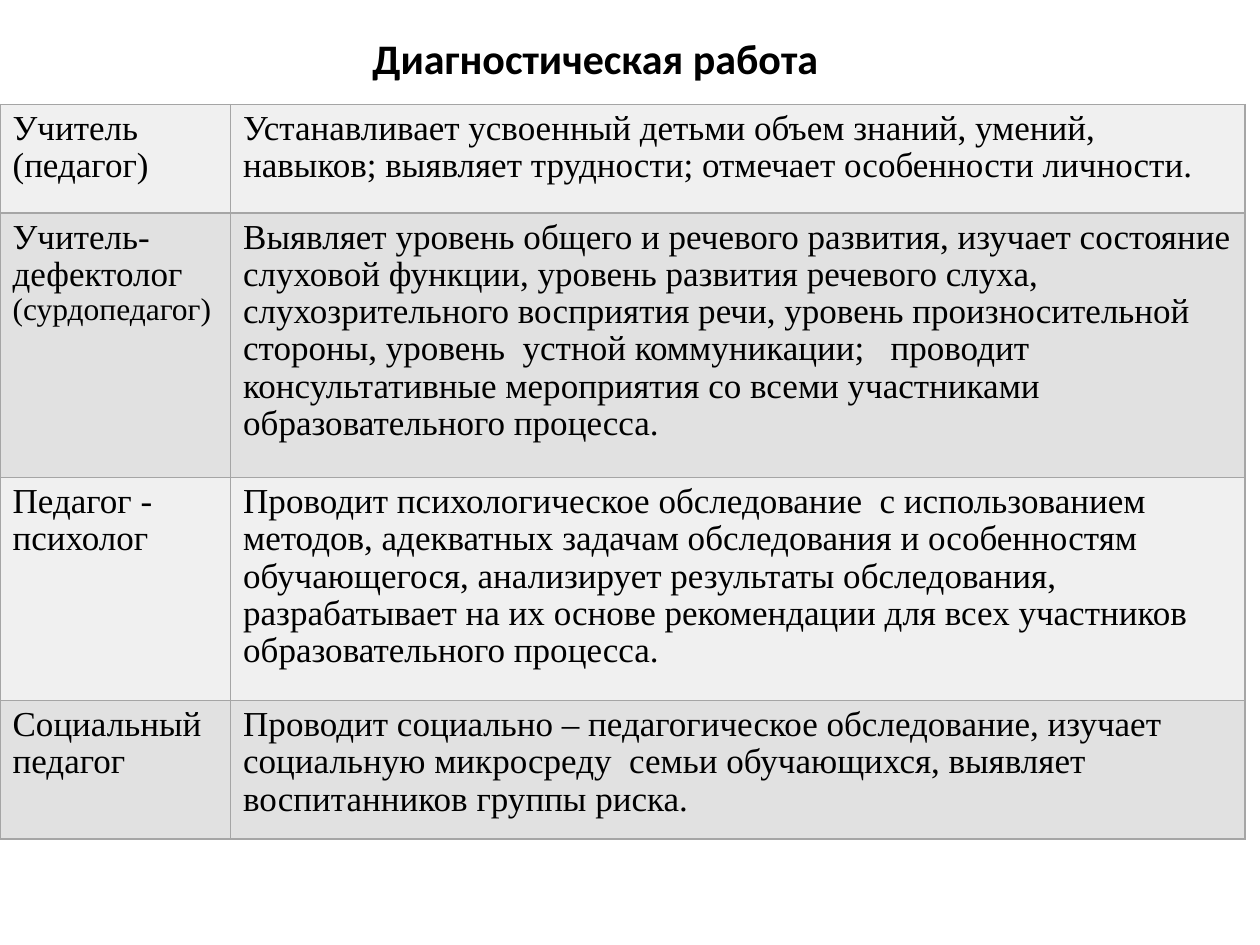
from dataclasses import dataclass

from lxml import etree
from pptx import Presentation
from pptx.dml.color import RGBColor
from pptx.enum.text import MSO_ANCHOR, PP_ALIGN
from pptx.oxml.ns import qn
from pptx.util import Inches, Pt

CENTER = PP_ALIGN.CENTER
MIDDLE = MSO_ANCHOR.MIDDLE
TOP = MSO_ANCHOR.TOP


@dataclass(frozen=True)
class Theme:
    """Colours, fonts and sizes of the slide."""
    ink: str = "000000"
    line: str = "A5A5A5"
    bands: tuple = ("F0F0F0", "E1E1E1")
    head: str = "Calibri"
    body: str = "Times New Roman"
    big: int = 24
    text: int = 20
    small: int = 18
    lead: float = 0.96


THEME = Theme()
TITLE = "Диагностическая работа"
COLS = (1.83, 8.05)
TALL = (0.86, 2.1, 1.77, 1.1)
ROLES = (
    (("Учитель (педагог)",),
     "Устанавливает усвоенный детьми объем знаний, умений, навыков; "
     "выявляет трудности; отмечает особенности личности."),
    (("Учитель-дефектолог ", "(сурдопедагог)"),
     "Выявляет уровень общего и речевого развития, изучает состояние "
     "слуховой функции, уровень развития речевого слуха, "
     "слухозрительного восприятия речи, уровень произносительной "
     "стороны, уровень  устной коммуникации;   проводит "
     "консультативные мероприятия со всеми участниками "
     "образовательного процесса."),
    (("Педагог - психолог",),
     "Проводит психологическое обследование  с использованием "
     "методов, адекватных задачам обследования и особенностям "
     "обучающегося, анализирует результаты обследования, "
     "разрабатывает на их основе рекомендации для всех участников "
     "образовательного процесса."),
    (("Социальный педагог",),
     "Проводит социально – педагогическое обследование, изучает "
     "социальную микросреду  семьи обучающихся, выявляет "
     "воспитанников группы риска."),
)


def add_run(para, text, font, size, bold=False):
    """Append one styled run to a paragraph."""
    run = para.add_run()
    run.text = text
    run.font.name = font
    run.font.size = Pt(size)
    run.font.bold = bold
    run.font.color.rgb = RGBColor.from_string(THEME.ink)


def add_edges(cell):
    """Draw a thin line on all four sides of a cell."""
    props = cell._tc.get_or_add_tcPr()
    for spot, side in enumerate(("a:lnL", "a:lnR", "a:lnT", "a:lnB")):
        edge = etree.Element(qn(side), w=str(Pt(1)))
        fill = etree.SubElement(edge, qn("a:solidFill"))
        etree.SubElement(fill, qn("a:srgbClr"), val=THEME.line)
        props.insert(spot, edge)


def fill_cell(cell, parts, shade):
    """Fill a cell; a second part is set in the small size."""
    cell.fill.solid()
    cell.fill.fore_color.rgb = RGBColor.from_string(shade)
    cell.vertical_anchor = TOP
    add_edges(cell)
    para = cell.text_frame.paragraphs[0]
    para.line_spacing = THEME.lead
    for part, size in zip(parts, (THEME.text, THEME.small)):
        add_run(para, part, THEME.body, size)


def add_title(slide, left, top, width, height):
    """Place the heading in the title placeholder."""
    title = slide.shapes.title
    title.left, title.top = Inches(left), Inches(top)
    title.width, title.height = Inches(width), Inches(height)
    frame = title.text_frame
    frame.word_wrap = False
    frame.vertical_anchor = MIDDLE
    para = frame.paragraphs[0]
    para.alignment = CENTER
    add_run(para, TITLE, THEME.head, THEME.big, True)


def add_roles(slide, left, top, width, height):
    """Place the table of staff roles and their duties."""
    table = slide.shapes.add_table(
        len(ROLES), len(COLS), Inches(left), Inches(top),
        Inches(width), Inches(height)).table
    table.first_row = False
    table.horz_banding = False
    for col, wide in zip(table.columns, COLS):
        col.width = Inches(wide)
    for i, (role, duty) in enumerate(ROLES):
        table.rows[i].height = Inches(TALL[i])
        shade = THEME.bands[i % 2]
        fill_cell(table.cell(i, 0), role, shade)
        fill_cell(table.cell(i, 1), (duty,), shade)


def main():
    """Build and save the slide."""
    deck = Presentation()
    deck.slide_width, deck.slide_height = Inches(10), Inches(7.5)
    slide = deck.slides.add_slide(deck.slide_layouts[5])
    add_title(slide, 2.8, 0.21, 3.85, 0.5)
    add_roles(slide, 0, 0.83, sum(COLS), sum(TALL))
    deck.save("out.pptx")


if __name__ == "__main__":
    main()
